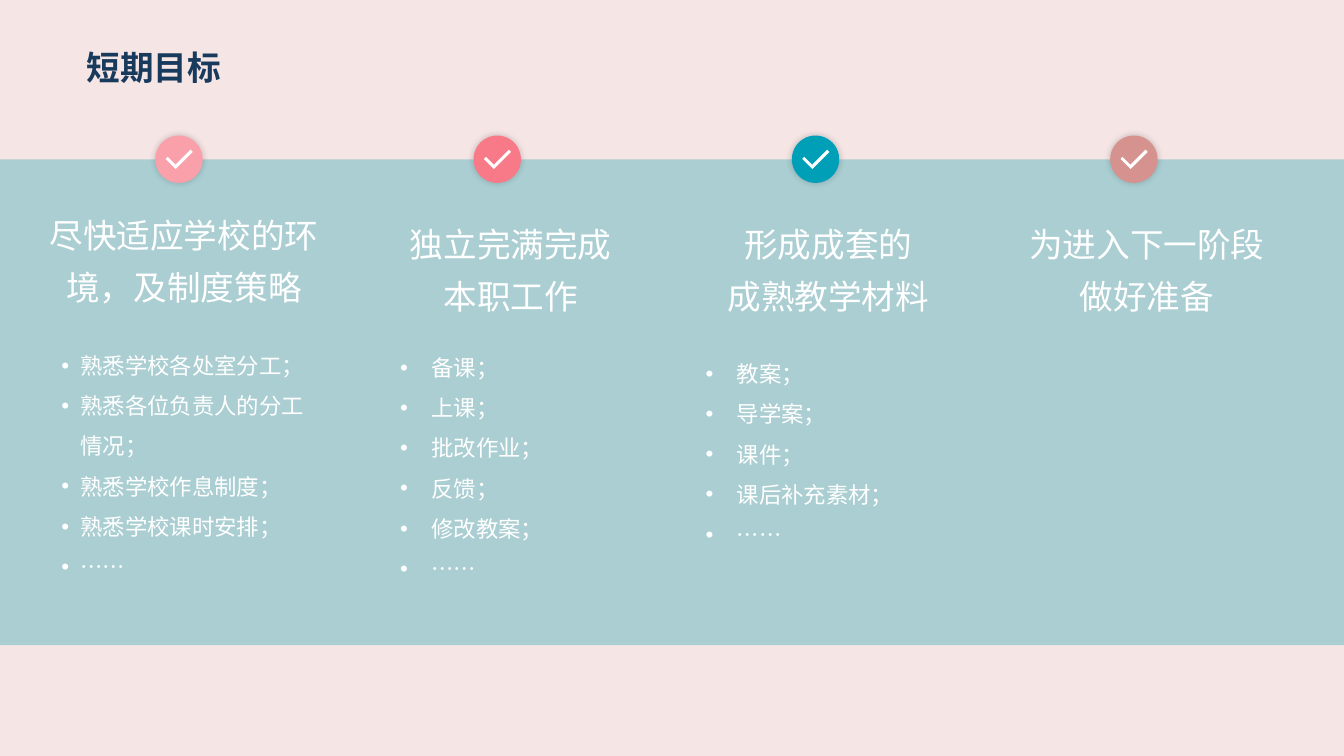
from lxml import etree
from pptx import Presentation
from pptx.dml.color import RGBColor
from pptx.enum.shapes import MSO_SHAPE
from pptx.enum.text import MSO_ANCHOR, PP_ALIGN
from pptx.oxml.ns import qn
from pptx.util import Inches, Pt

RECTANGLE, OVAL, CORNER = MSO_SHAPE.RECTANGLE, MSO_SHAPE.OVAL, MSO_SHAPE.CORNER
CENTER, LEFT = PP_ALIGN.CENTER, PP_ALIGN.LEFT
TOP, MIDDLE = MSO_ANCHOR.TOP, MSO_ANCHOR.MIDDLE

WIDTH, HEIGHT = 13.33, 7.5
FONT = "Noto Sans CJK SC"
WHITE = "FFFFFF"
BAND_TOP, BAND_HEIGHT = 1.58, 4.82
BADGE_SIZE, FIRST_BADGE, COLUMN_STEP = 0.47, 1.54, 3.157

# Each goal: badge colour, heading box and lines, list box, indent and items
GOALS = [
    ("FAA0AA", (0.35, 1.96, 2.95, 1.1), ["尽快适应学校的环境，及制度策略"],
     (0.51, 3.31, 2.79, 2.48), 0.19,
     ["熟悉学校各处室分工；", "熟悉各位负责人的分工情况；", "熟悉学校作息制度；",
      "熟悉学校课时安排；", "……"]),
    ("F87987", (3.67, 2.05, 2.79, 1.1), ["独立完满完成", "本职工作"],
     (3.87, 3.33, 2.79, 2.88), 0.31,
     ["备课；", "上课；", "批改作业；", "反馈；", "修改教案；", "……"]),
    ("009FB8", (6.74, 2.05, 2.95, 1.1), ["形成成套的", "成熟教学材料"],
     (6.9, 3.39, 2.79, 2.07), 0.31,
     ["教案；", "导学案；", "课件；", "课后补充素材；", "……"]),
    ("D5928E", (9.98, 2.05, 2.79, 1.1), ["为进入下一阶段做好准备"], None, 0, []),
]


def color(value):
    return RGBColor.from_string(value)


def add_filled(shapes, kind, box, fill):
    shape = shapes.add_shape(kind, *map(Inches, box))
    shape.shadow.inherit = False
    shape.fill.solid()
    shape.fill.fore_color.rgb = color(fill)
    shape.line.fill.background()
    return shape


def add_soft_shadow(shape):
    effects = shape.element.spPr.find(qn("a:effectLst"))
    shadow = etree.SubElement(effects, qn("a:outerShdw"), blurRad=str(Pt(5)),
                              dist="0", algn="ctr", rotWithShape="0")
    black = etree.SubElement(shadow, qn("a:srgbClr"), val="000000")
    etree.SubElement(black, qn("a:alpha"), val="20000")


def add_bullet(para, indent):
    properties = para._p.get_or_add_pPr()
    properties.set("marL", str(Inches(indent)))
    properties.set("indent", str(-Inches(indent)))
    etree.SubElement(properties, qn("a:buFont"), typeface="Arial")
    etree.SubElement(properties, qn("a:buChar"), char="•")


def add_text(page, box, lines, size, fill=WHITE, bold=False, anchor=TOP,
             indent=0, **layout):
    frame = page.shapes.add_textbox(*map(Inches, box)).text_frame
    frame.word_wrap = True
    frame.vertical_anchor = anchor
    for index, line in enumerate(lines):
        para = frame.paragraphs[0] if index == 0 else frame.add_paragraph()
        for name, value in layout.items():
            setattr(para, name, value)
        if indent:
            add_bullet(para, indent)
        span = para.add_run()
        span.text = line
        for name, value in {"name": FONT, "size": Pt(size), "bold": bold}.items():
            setattr(span.font, name, value)
        span.font.color.rgb = color(fill)
        fonts = span._r.get_or_add_rPr()
        etree.SubElement(fonts, qn("a:ea"), typeface=FONT)


def add_badge(page, box, fill):
    left, top, size = box
    group = page.shapes.add_group_shape()
    add_soft_shadow(add_filled(group.shapes, OVAL, (left, top, size, size), fill))
    # Check mark: a thin corner turned by 45 degrees
    tick_box = (left + size * 0.25, top + size * 0.27, size * 0.51, size * 0.3)
    tick = add_filled(group.shapes, CORNER, tick_box, WHITE)
    tick.adjustments[0], tick.adjustments[1] = 0.218, 0.206
    tick.rotation = 315


def add_goal(page, column, goal):
    fill, heading_box, heading, list_box, indent, items = goal
    badge_box = (FIRST_BADGE + column * COLUMN_STEP,
                 BAND_TOP - BADGE_SIZE / 2, BADGE_SIZE)
    add_badge(page, badge_box, fill)
    add_text(page, heading_box, heading, 24, alignment=CENTER, line_spacing=1.3)
    if items:
        add_text(page, list_box, items, 16, indent=indent,
                 alignment=LEFT, line_spacing=1.5)


def main():
    deck = Presentation()
    deck.slide_width, deck.slide_height = Inches(WIDTH), Inches(HEIGHT)
    page = deck.slides.add_slide(deck.slide_layouts[6])
    page.background.fill.solid()
    page.background.fill.fore_color.rgb = color("F5E5E4")

    # Band and title
    add_filled(page.shapes, RECTANGLE, (0, BAND_TOP, WIDTH, BAND_HEIGHT), "AACED2")
    add_text(page, (0.76, 0.4, 6.13, 0.58), ["短期目标"], 24, "183A5D", True,
             MIDDLE, line_spacing=0.9, space_before=Pt(10))

    # Goal columns
    for column, goal in enumerate(GOALS):
        add_goal(page, column, goal)
    deck.save("out.pptx")


if __name__ == "__main__":
    main()
